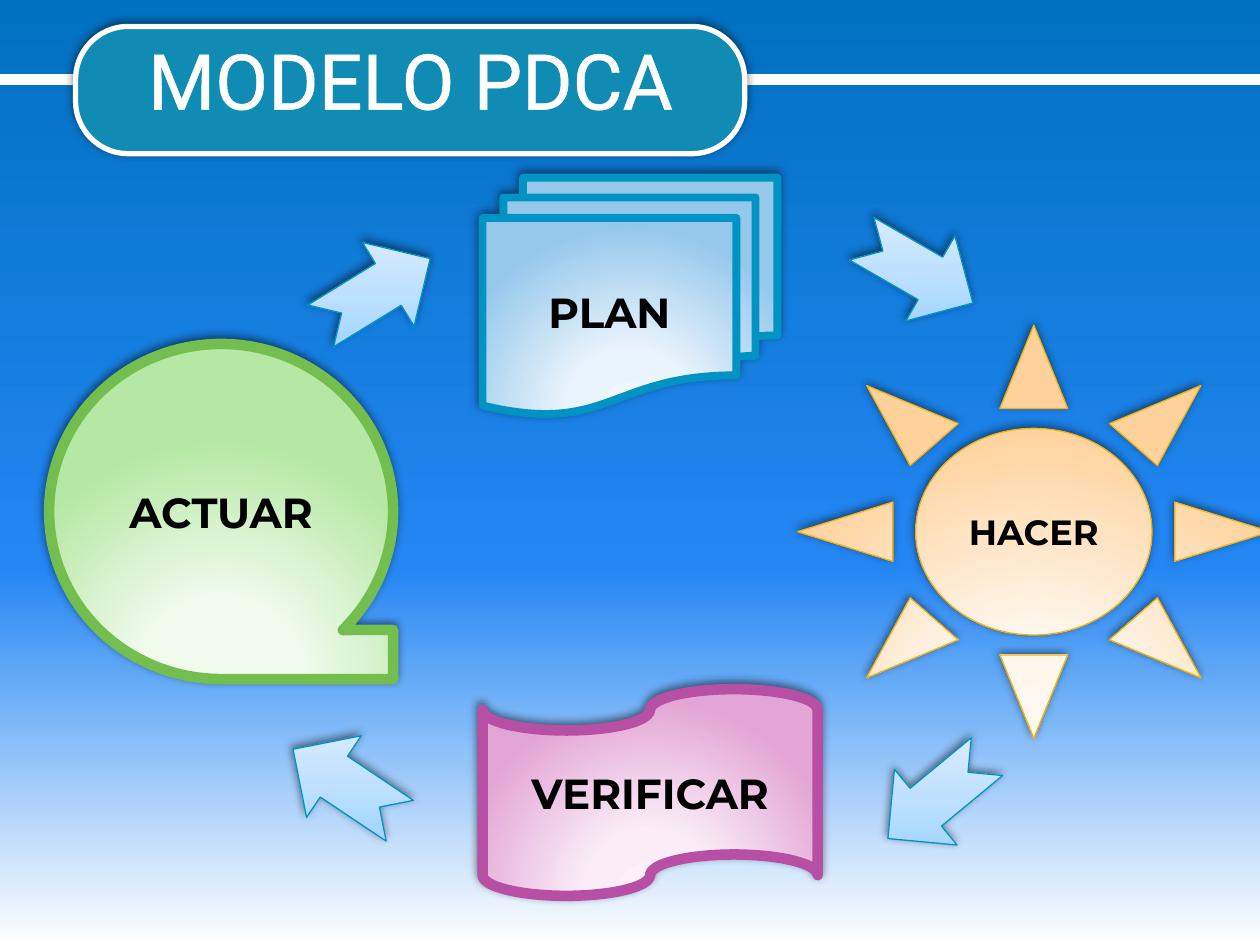
from pptx import Presentation
from pptx.dml.color import RGBColor
from pptx.enum.shapes import MSO_CONNECTOR as Conn, MSO_SHAPE as Kind
from pptx.enum.text import MSO_ANCHOR as Anchor, PP_ALIGN as Align
from pptx.oxml import parse_xml
from pptx.oxml.ns import nsdecls, qn
from pptx.util import Inches, Pt

WHITE = RGBColor(0xFF, 0xFF, 0xFF)
BLACK = RGBColor(0x00, 0x00, 0x00)
TEAL = RGBColor(0x10, 0x8B, 0xB4)
BLUE = RGBColor(0x00, 0x93, 0xC4)
GREEN = RGBColor(0x74, 0xBE, 0x50)
GOLD = RGBColor(0xF8, 0xB0, 0x07)
PLUM = RGBColor(0xB7, 0x4F, 0xA5)
SKY = [(0, RGBColor(0x00, 0x70, 0xC0)), (60, RGBColor(0x24, 0x86, 0xF3)), (100, WHITE)]
ICE = [(0, RGBColor(0x96, 0xD0, 0xFF)), (50, RGBColor(0xBF, 0xE1, 0xFF)),
       (100, RGBColor(0xE0, 0xEF, 0xFF))]
LIME = [(0, RGBColor(0xF3, 0xFD, 0xF0)), (34, RGBColor(0xF0, 0xFB, 0xED)),
        (100, RGBColor(0xB5, 0xE8, 0xA4))]
PEACH = [(0, RGBColor(0xFF, 0xF8, 0xF1)), (34, RGBColor(0xFF, 0xF6, 0xEC)),
         (100, RGBColor(0xFF, 0xD2, 0x9C))]
AQUA = [(0, RGBColor(0xEE, 0xF7, 0xFE)), (34, RGBColor(0xEA, 0xF4, 0xFC)),
        (100, RGBColor(0x96, 0xC8, 0xEC))]
PINK = [(0, RGBColor(0xFC, 0xF1, 0xFA)), (34, RGBColor(0xFA, 0xED, 0xF7)),
        (100, RGBColor(0xE3, 0xA5, 0xD5))]
GLOW = '<a:path path="circle"><a:fillToRect l="50000" t="155000" r="50000" b="-55000"/></a:path>'
DOWN = '<a:lin ang="5400000" scaled="0"/>'
UP = '<a:lin ang="16200000" scaled="0"/>'


def blend(props, stops, shade):
    """Swap the solid fill in props for a gradient."""
    marks = "".join(f'<a:gs pos="{pos * 1000}"><a:srgbClr val="{tone}"/></a:gs>'
                    for pos, tone in stops)
    grad = parse_xml(f'<a:gradFill {nsdecls("a")} rotWithShape="0">'
                     f'<a:gsLst>{marks}</a:gsLst>{shade}</a:gradFill>')
    props.replace(props.find(qn("a:solidFill")), grad)


def draw(kind, box, edge, width):
    """Add a shape with a round-joined outline and a soft shadow."""
    shape = slide.shapes.add_shape(kind, *map(Inches, box))
    shape.fill.solid()
    shape.fill.fore_color.rgb = TEAL
    shape.line.color.rgb = edge
    shape.line.width = Pt(width)
    props = shape.element.spPr
    props.find(qn("a:ln")).append(parse_xml(f'<a:round {nsdecls("a")}/>'))
    shape.shadow.inherit = False
    props.find(qn("a:effectLst")).append(parse_xml(
        f'<a:outerShdw {nsdecls("a")} blurRad="{Pt(5)}" dist="{Pt(2)}" dir="14700000" '
        'algn="ctr" rotWithShape="0"><a:srgbClr val="000000">'
        '<a:alpha val="50000"/></a:srgbClr></a:outerShdw>'))
    return shape


deck = Presentation()
deck.slide_width, deck.slide_height = Inches(10), Inches(7.5)
slide = deck.slides.add_slide(deck.slide_layouts[6])

# Background
slide.background.fill.solid()
slide.background.fill.fore_color.rgb = WHITE
blend(slide.element.find(".//" + qn("p:bgPr")), SKY, DOWN)

# Rule behind the title
rule = slide.shapes.add_connector(Conn.STRAIGHT, 0, Inches(0.63), Inches(10), Inches(0.63))
rule.line.color.rgb = WHITE
rule.line.width = Pt(6)
rule.element.spPr.append(parse_xml(f'<a:effectLst {nsdecls("a")}/>'))

# Title
plate = draw(Kind.ROUNDED_RECTANGLE, (0.6, 0.21, 5.31, 1.01), WHITE, 3)
plate.adjustments[0] = 0.414
title = slide.shapes.add_textbox(Inches(0.55), Inches(0.21), Inches(5.42), Inches(0.84))
title.text_frame.text = "MODELO PDCA"
title.text_frame.word_wrap = False
para = title.text_frame.paragraphs[0]
para.alignment = Align.CENTER
font = para.runs[0].font
font.name, font.size = "Roboto", Pt(44)
font.color.rgb = WHITE
para.runs[0].font._element.insert(0, parse_xml(
    f'<a:ln {nsdecls("a")} w="{Pt(1.45)}"><a:solidFill><a:srgbClr val="{WHITE}"/>'
    '</a:solidFill></a:ln>'))

# The four stages
stages = [
    ("ACTUAR", Kind.FLOWCHART_SEQUENTIAL_ACCESS_STORAGE, (0.39, 2.73, 2.73, 2.66),
     LIME, GREEN, 6, 24),
    ("HACER", Kind.SUN, (6.33, 2.58, 3.75, 3.28), PEACH, GOLD, 0.75, 20),
    ("PLAN", Kind.FLOWCHART_MULTIDOCUMENT, (3.83, 1.41, 2.34, 1.88), AQUA, BLUE, 4.5, 24),
    ("VERIFICAR", Kind.FLOWCHART_PUNCHED_TAPE, (3.83, 5.47, 2.66, 1.64), PINK, PLUM, 6, 24),
]
for name, kind, box, stops, edge, width, size in stages:
    stage = draw(kind, box, edge, width)
    blend(stage.element.spPr, stops, GLOW)
    stage.text_frame.text = name
    stage.text_frame.vertical_anchor = Anchor.MIDDLE
    para = stage.text_frame.paragraphs[0]
    para.alignment = Align.CENTER
    font = para.runs[0].font
    font.name, font.size, font.bold = "Montserrat", Pt(size), True
    font.color.rgb = BLACK

# Arrows between the stages
for left, top, turn in [(2.47, 1.93, 328.4), (6.77, 1.76, 30),
                        (6.93, 5.94, 140.4), (2.24, 5.84, 213.8)]:
    arrow = draw(Kind.NOTCHED_RIGHT_ARROW, (left, top, 1.02, 0.78), BLUE, 0.75)
    blend(arrow.element.spPr, ICE, UP)
    arrow.rotation = turn

deck.save("out.pptx")
